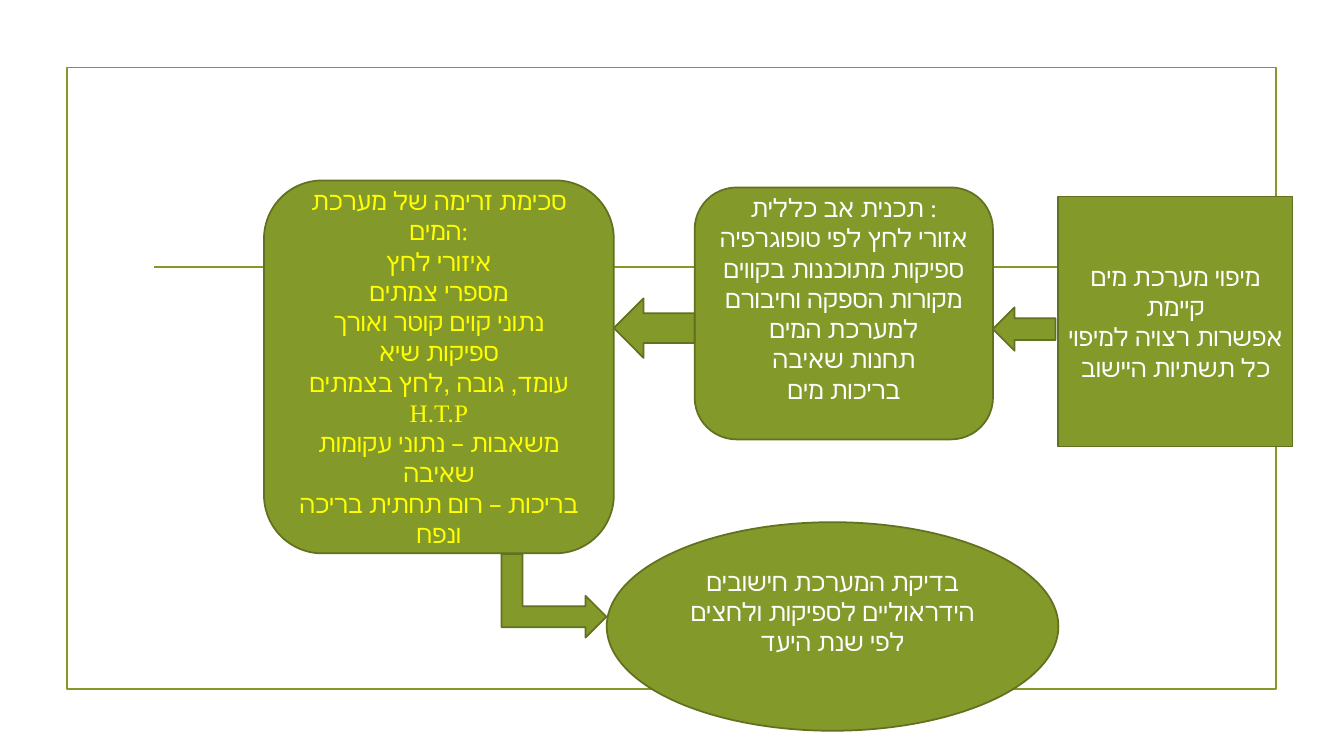
from dataclasses import dataclass

from lxml.etree import SubElement
from pptx import Presentation
from pptx.dml.color import RGBColor
from pptx.enum.shapes import MSO_CONNECTOR, MSO_SHAPE as Preset
from pptx.enum.text import MSO_ANCHOR, PP_ALIGN
from pptx.oxml.ns import qn
from pptx.util import Pt

COLOURS = {"olive": "83992A", "edge": "61711F", "white": "FFFFFF", "yellow": "FFFF00"}
FONT = "Times New Roman"
TEXT_SIZE = 18
LINE_WIDTH = 1.25


@dataclass(frozen=True)
class Step:
    preset: Preset
    left: float
    top: float
    width: float
    height: float
    lines: tuple[str, ...] = ()
    text_colour: str = "white"
    bottom_inset: float = 3.6
    rotation: float = 0


STEPS = (
    Step(Preset.ROUNDED_RECTANGLE, 496.2, 133.9, 213.1, 180, (
        "תכנית אב כללית :",
        "אזורי לחץ לפי טופוגרפיה",
        "ספיקות מתוכננות בקווים",
        "מקורות הספקה וחיבורם למערכת המים",
        "תחנות שאיבה",
        "בריכות מים",
    ), bottom_inset=25.2),
    Step(Preset.LEFT_ARROW, 438.5, 213.1, 57.6, 42.5),
    Step(Preset.ROUNDED_RECTANGLE, 188.6, 128.9, 249.9, 266.4, (
        "סכימת זרימה של מערכת המים:",
        "איזורי לחץ",
        "מספרי צמתים",
        "נתוני קוים קוטר ואורך",
        "ספיקות שיא",
        "עומד, גובה ,לחץ בצמתים H.T.P",
        "משאבות – נתוני עקומות שאיבה",
        "בריכות – רום תחתית בריכה ונפח",
    ), "yellow"),
    Step(Preset.RECTANGLE, 756, 140.4, 167.3, 178.6, (
        "מיפוי מערכת מים קיימת",
        "אפשרות רצויה למיפוי כל תשתיות היישוב",
    )),
    Step(Preset.LEFT_ARROW, 709.2, 219.6, 44.7, 31),
    Step(Preset.OVAL, 433.4, 373, 322.6, 149, (
        "בדיקת המערכת חישובים הידראוליים לספיקות ולחצים לפי שנת היעד",
    ), bottom_inset=25.2),
    Step(Preset.BENT_UP_ARROW, 365.8, 388.1, 59.8, 74.9, rotation=90),
)


def colour(name: str) -> RGBColor:
    return RGBColor.from_string(COLOURS[name])


def set_line(item, name: str) -> None:
    item.line.color.rgb = colour(name)
    item.line.width = Pt(LINE_WIDTH)


def draw_backdrop(slide) -> None:
    frame = slide.shapes.add_shape(Preset.RECTANGLE, Pt(47.7), Pt(48.2), Pt(864), Pt(444))
    frame.shadow.inherit = False
    frame.fill.background()
    set_line(frame, "olive")
    rule = slide.shapes.add_connector(
        MSO_CONNECTOR.STRAIGHT, Pt(110.2), Pt(190.8), Pt(850.3), Pt(190.8))
    set_line(rule, "olive")
    SubElement(rule._element.spPr, qn("a:effectLst"))


def write_lines(frame, step: Step) -> None:
    frame.word_wrap = True
    frame.vertical_anchor = MSO_ANCHOR.MIDDLE
    frame.margin_bottom = Pt(step.bottom_inset)
    frame.text = "\n".join(step.lines)
    for paragraph in frame.paragraphs:
        paragraph.alignment = PP_ALIGN.CENTER
        paragraph.font.name = FONT
        paragraph.font.size = Pt(TEXT_SIZE)
        paragraph.font.color.rgb = colour(step.text_colour)


def draw_step(slide, step: Step) -> None:
    shape = slide.shapes.add_shape(
        step.preset, Pt(step.left), Pt(step.top), Pt(step.width), Pt(step.height))
    shape.rotation = step.rotation
    shape.shadow.inherit = False
    shape.fill.solid()
    shape.fill.fore_color.rgb = colour("olive")
    set_line(shape, "edge")
    if step.lines:
        write_lines(shape.text_frame, step)


def main() -> None:
    deck = Presentation()
    deck.slide_width, deck.slide_height = Pt(960), Pt(540)
    slide = deck.slides.add_slide(deck.slide_layouts[6])
    draw_backdrop(slide)
    for step in STEPS:
        draw_step(slide, step)
    deck.save("out.pptx")


if __name__ == "__main__":
    main()
